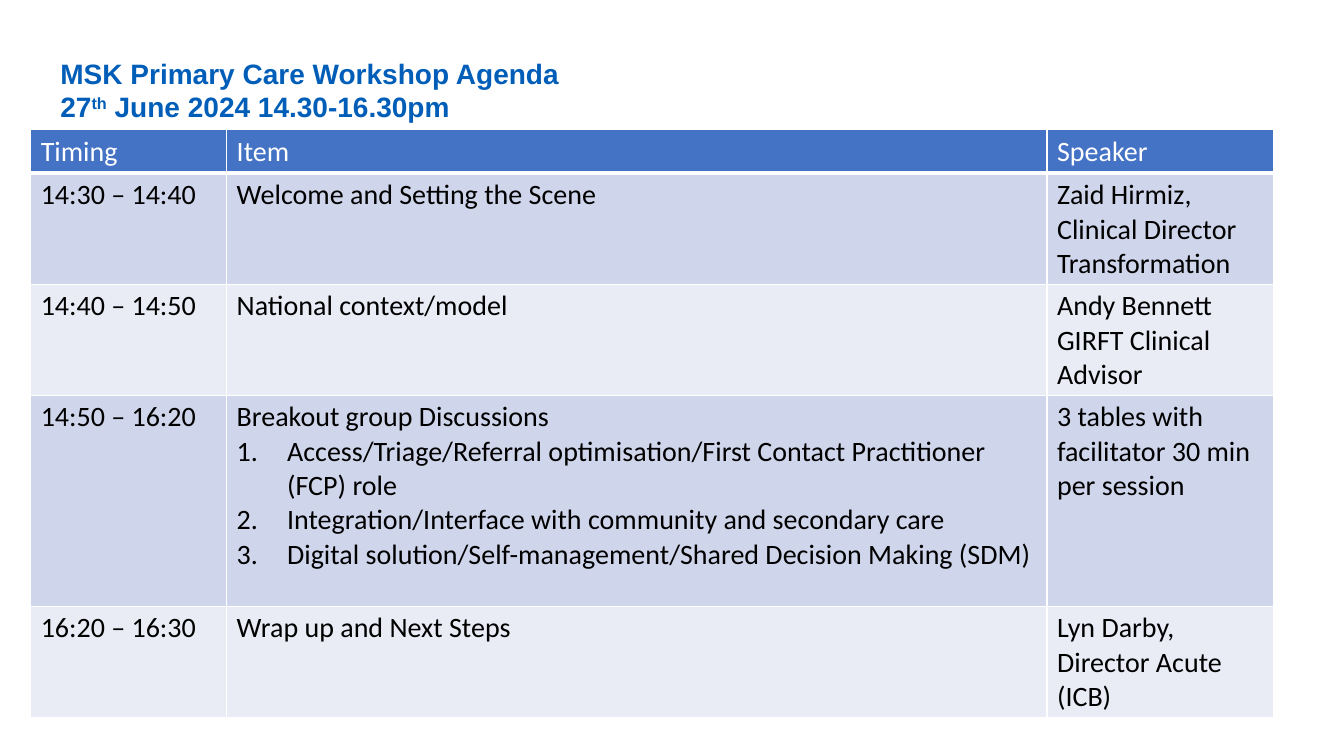
from lxml.etree import SubElement
from pptx import Presentation
from pptx.dml.color import RGBColor
from pptx.enum.text import MSO_AUTO_SIZE
from pptx.oxml.ns import qn
from pptx.util import Pt

COLOURS = {
    "title": "005EB8",
    "header": "4472C4",
    "odd_row": "CFD5EA",
    "even_row": "E9EBF5",
    "white": "FFFFFF",
    "black": "000000",
}
TITLE_LINES = [
    ["MSK Primary Care Workshop Agenda"],
    ["27", "th", " June 2024 14.30-16.30pm"],
]
AGENDA = [
    ("Timing", ["Item"], "Speaker"),
    ("14:30 – 14:40", ["Welcome and Setting the Scene"],
     "Zaid Hirmiz, Clinical Director Transformation"),
    ("14:40 – 14:50", ["National context/model"],
     "Andy Bennett GIRFT Clinical Advisor"),
    ("14:50 – 16:20", [
        "Breakout group Discussions",
        "Access/Triage/Referral optimisation/First Contact Practitioner (FCP) role",
        "Integration/Interface with community and secondary care",
        "Digital solution/Self-management/Shared Decision Making (SDM)",
    ], "3 tables with facilitator 30 min per session"),
    ("16:20 – 16:30", ["Wrap up and Next Steps"],
     "Lyn Darby, Director Acute (ICB)"),
]
COLUMN_WIDTHS = [140, 586, 162]
ROW_HEIGHTS = [31.3, 79.3, 79.3, 150.7, 79.3]


def style_run(run, font_name, colour, bold=False):
    """Give a run its font, size, colour and weight."""
    run.font.name = font_name
    run.font.size = Pt(20)
    run.font.bold = bold
    run.font.color.rgb = RGBColor.from_string(COLOURS[colour])


def add_title(slide):
    """Add the two-line title with its raised ordinal suffix."""
    shape = slide.shapes.add_textbox(Pt(36), Pt(36.7), Pt(480), Pt(55.7))
    text_frame = shape.text_frame
    text_frame.word_wrap = True
    text_frame.auto_size = MSO_AUTO_SIZE.SHAPE_TO_FIT_TEXT
    for index, line in enumerate(TITLE_LINES):
        paragraph = text_frame.paragraphs[0] if index == 0 else text_frame.add_paragraph()
        for text in line:
            run = paragraph.add_run()
            run.text = text
            style_run(run, "Arial", "title", bold=True)
            if text == "th":
                run.font._element.set("baseline", "30000")


def number_paragraph(paragraph):
    """Turn a paragraph into a numbered item with a hanging indent."""
    properties = paragraph._p.get_or_add_pPr()
    properties.set("marL", str(Pt(36)))
    properties.set("indent", str(-Pt(36)))
    SubElement(properties, qn("a:buFont"), typeface="+mj-lt")
    SubElement(properties, qn("a:buAutoNum"), type="arabicPeriod")


def add_borders(cell, bottom_width):
    """Draw white borders around a cell."""
    properties = cell._tc.get_or_add_tcPr()
    for side, width in (("L", 1), ("R", 1), ("T", 1), ("B", bottom_width)):
        line = SubElement(properties, qn(f"a:ln{side}"), w=str(Pt(width)))
        fill = SubElement(line, qn("a:solidFill"))
        SubElement(fill, qn("a:srgbClr"), val=COLOURS["white"])


def fill_cell(cell, lines, fill, text_colour, bottom_width):
    """Write the lines of a cell, numbering all after the first."""
    add_borders(cell, bottom_width)
    cell.fill.solid()
    cell.fill.fore_color.rgb = RGBColor.from_string(COLOURS[fill])
    cell.text_frame.text = "\n".join(lines)
    for index, paragraph in enumerate(cell.text_frame.paragraphs):
        if index:
            number_paragraph(paragraph)
        for run in paragraph.runs:
            style_run(run, "Calibri", text_colour)


def add_agenda(slide):
    """Add the agenda table with a header and banded rows."""
    table = slide.shapes.add_table(
        len(AGENDA), len(COLUMN_WIDTHS), Pt(21.9), Pt(92.4),
        Pt(sum(COLUMN_WIDTHS)), Pt(sum(ROW_HEIGHTS))).table
    for column, width in zip(table.columns, COLUMN_WIDTHS):
        column.width = Pt(width)
    for row_index, (timing, items, speaker) in enumerate(AGENDA):
        row = table.rows[row_index]
        row.height = Pt(ROW_HEIGHTS[row_index])
        if row_index == 0:
            look = ("header", "white", 3)
        else:
            look = ("odd_row" if row_index % 2 else "even_row", "black", 1)
        for cell, lines in zip(row.cells, ([timing], items, [speaker])):
            fill_cell(cell, lines, *look)


def main():
    """Build the agenda slide and save it."""
    presentation = Presentation()
    presentation.slide_width = Pt(960)
    presentation.slide_height = Pt(540)
    slide = presentation.slides.add_slide(presentation.slide_layouts[6])
    add_title(slide)
    add_agenda(slide)
    presentation.save("out.pptx")


if __name__ == "__main__":
    main()
